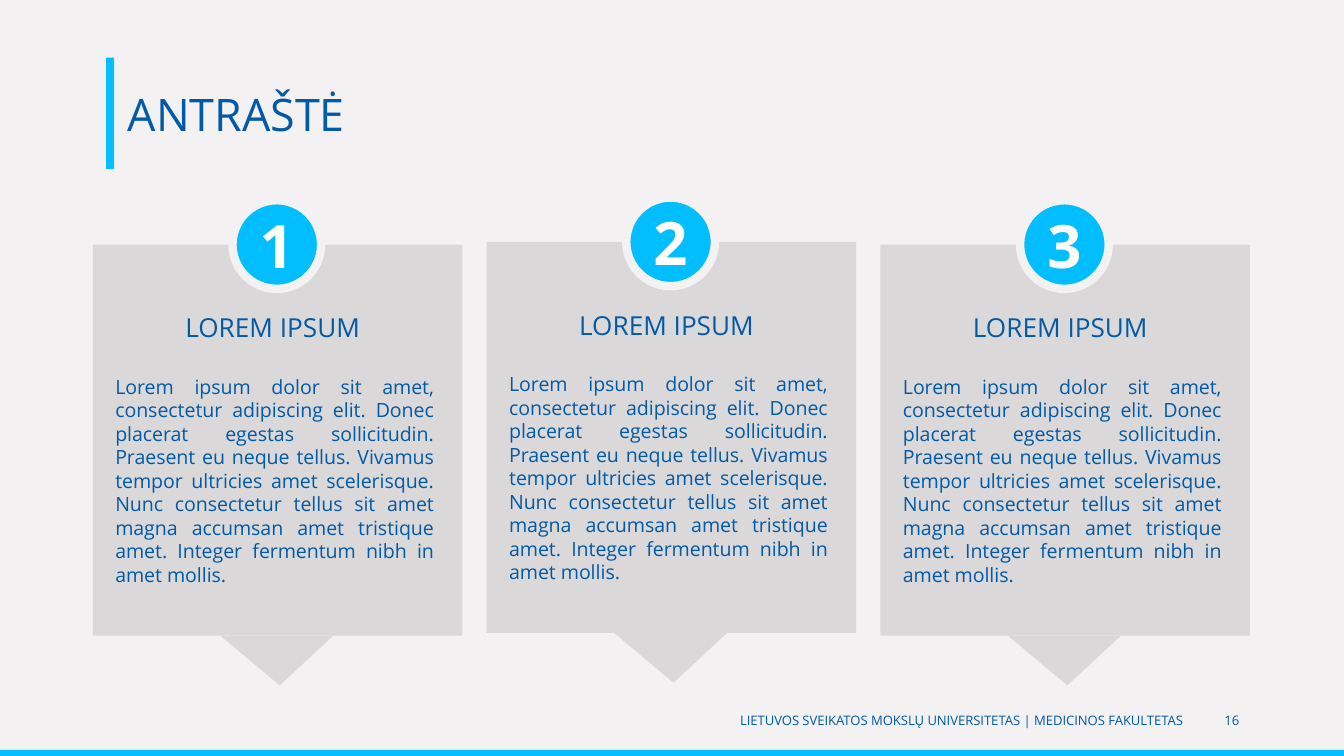
from pptx import Presentation
from pptx.dml.color import RGBColor
from pptx.enum.shapes import MSO_SHAPE
from pptx.enum.text import MSO_ANCHOR, MSO_AUTO_SIZE, PP_ALIGN
from pptx.util import Inches, Pt

RECT, OVAL, TRIANGLE = MSO_SHAPE.RECTANGLE, MSO_SHAPE.OVAL, MSO_SHAPE.ISOSCELES_TRIANGLE
TOP, MIDDLE = MSO_ANCHOR.TOP, MSO_ANCHOR.MIDDLE
LEFT, CENTER, RIGHT, JUSTIFY = PP_ALIGN.LEFT, PP_ALIGN.CENTER, PP_ALIGN.RIGHT, PP_ALIGN.JUSTIFY
NO_AUTOFIT = MSO_AUTO_SIZE.NONE


class Theme:
    font = "Open Sans"
    background = RGBColor.from_string("F3F1F2")
    accent = RGBColor.from_string("06BDFF")
    badge = RGBColor.from_string("02BEFE")
    ring = RGBColor.from_string("F4F1F2")
    card = RGBColor.from_string("DBD8D9")
    text = RGBColor.from_string("015AA7")
    footer = RGBColor.from_string("015AA8")
    white = RGBColor.from_string("FFFFFF")
    title_size, number_size, heading_size, body_size, footer_size = 24, 32, 14, 10.5, 7


def add_filled(shapes, kind, x, y, w, h, color):
    sp = shapes.add_shape(kind, Inches(x), Inches(y), Inches(w), Inches(h))
    sp.shadow.inherit = False
    sp.fill.solid()
    sp.fill.fore_color.rgb = color
    sp.line.fill.background()
    return sp


def write(sp, text, size, align, anchor=MIDDLE, color=Theme.text, bold=False):
    """Put one formatted paragraph into a shape."""
    tf = sp.text_frame
    tf.text = text
    tf.word_wrap = True
    tf.auto_size = NO_AUTOFIT
    tf.vertical_anchor = anchor
    p = tf.paragraphs[0]
    p.alignment = align
    font = p.runs[0].font
    font.name, font.size, font.bold = Theme.font, Pt(size), bold
    font.color.rgb = color


prs = Presentation()
prs.slide_width, prs.slide_height = Inches(10), Inches(10 * 9 / 16)
s = prs.slides.add_slide(prs.slide_layouts[5])
s.background.fill.solid()
s.background.fill.fore_color.rgb = Theme.background

# Title and accent bars
add_filled(s.shapes, RECT, 0.79, 0.43, 0.06, 0.83, Theme.accent)
add_filled(s.shapes, RECT, 0, 5.58, 10, 0.05, Theme.accent)
title = s.shapes.title
title.left, title.top = Inches(0.85), Inches(0.43)
title.width, title.height = Inches(8.46), Inches(0.83)
write(title, "ANTRAŠTĖ", Theme.title_size, LEFT)

# Footer and page number
for text, x, w in [
    ("LIETUVOS SVEIKATOS MOKSLŲ UNIVERSITETAS | MEDICINOS FAKULTETAS", 1.68, 7.22),
    ("16", 8.96, 0.36),
]:
    tb = s.shapes.add_textbox(Inches(x), Inches(5.21), Inches(w), Inches(0.3))
    write(tb, text, Theme.footer_size, RIGHT, color=Theme.footer)

# Numbered cards, the middle one slightly raised
BODY = (
    "Lorem ipsum dolor sit amet, consectetur adipiscing elit. Donec placerat egestas "
    "sollicitudin. Praesent eu neque tellus. Vivamus tempor ultricies amet scelerisque. "
    "Nunc consectetur tellus sit amet magna accumsan amet tristique amet. Integer "
    "fermentum nibh in amet mollis."
)
CARD_LEFT, CARD_PITCH = 0.69, 2.93
for i, y in enumerate([1.82, 1.8, 1.82]):
    x = CARD_LEFT + i * CARD_PITCH
    card = s.shapes.add_group_shape().shapes
    add_filled(card, RECT, x, y, 2.75, 2.91, Theme.card)

    badge = add_filled(card, OVAL, x + 1.04, y - 0.33, 0.66, 0.66, Theme.badge)
    badge.line.color.rgb = Theme.ring
    badge.line.width = Pt(4.5)
    write(badge, str(i + 1), Theme.number_size, CENTER, color=Theme.white, bold=True)

    pointer = add_filled(card, TRIANGLE, x + 0.95, y + 2.91, 0.84, 0.37, Theme.card)
    pointer.adjustments[0] = 0.475
    pointer.rotation = 180

    body = card.add_textbox(Inches(x + 0.07), Inches(y + 0.92), Inches(2.57), Inches(1.69))
    write(body, BODY, Theme.body_size, JUSTIFY, TOP)
    heading = card.add_textbox(Inches(x + 0.07), Inches(y + 0.45), Inches(2.59), Inches(0.34))
    write(heading, "LOREM IPSUM ", Theme.heading_size, CENTER, TOP)

prs.save("out.pptx")
